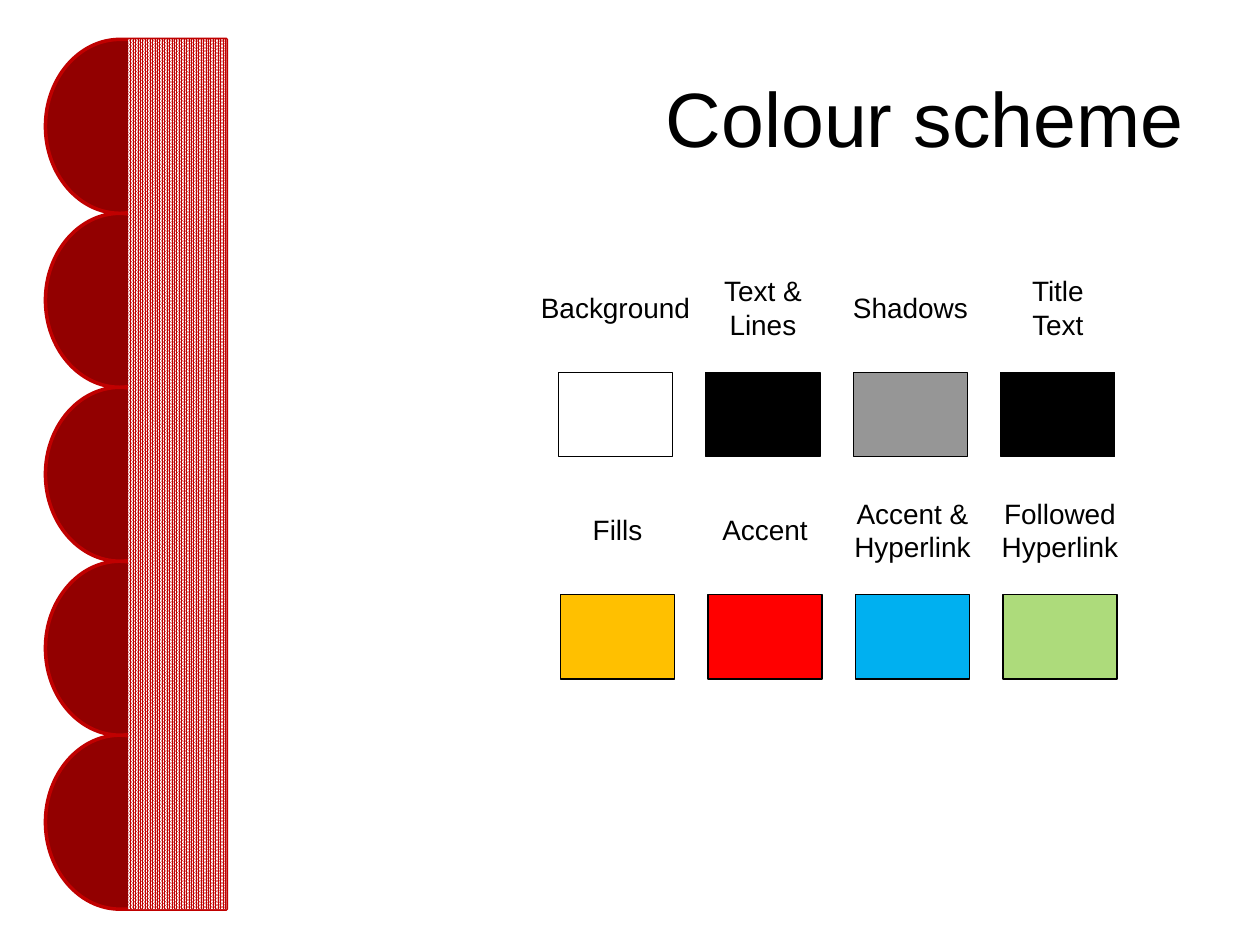
from lxml import etree
from pptx import Presentation
from pptx.dml.color import RGBColor
from pptx.enum.dml import MSO_PATTERN
from pptx.enum.shapes import MSO_SHAPE
from pptx.enum.text import MSO_ANCHOR, MSO_AUTO_SIZE, PP_ALIGN
from pptx.oxml.ns import qn
from pptx.util import Pt

BLACK = RGBColor(0x00, 0x00, 0x00)
WHITE = RGBColor(0xFF, 0xFF, 0xFF)
GREY = RGBColor(0x96, 0x96, 0x96)
AMBER = RGBColor(0xFF, 0xC0, 0x00)
RED = RGBColor(0xFF, 0x00, 0x00)
BLUE = RGBColor(0x00, 0xB0, 0xF0)
GREEN = RGBColor(0xAD, 0xDB, 0x7B)
DARK_RED = RGBColor(0x92, 0x00, 0x00)
CRIMSON = RGBColor(0xC0, 0x00, 0x00)

# Label, label width, swatch colour
BASE_ROW = [("Background", 100, WHITE), ("Text &\nLines", 60.5, BLACK),
            ("Shadows", 80, GREY), ("Title\vText", 45.4, BLACK)]
ACCENT_ROW = [("Fills", 42.5, AMBER), ("Accent", 63.4, RED),
              ("Accent &\nHyperlink", 80.6, BLUE),
              ("Followed\nHyperlink", 80.6, GREEN)]


def add_text(s, text, x, y, w, h, size=16, align=PP_ALIGN.CENTER,
             wrap=False, inset=0, fit=MSO_AUTO_SIZE.SHAPE_TO_FIT_TEXT):
    tf = s.shapes.add_textbox(Pt(x), Pt(y), Pt(w), Pt(h)).text_frame
    tf.text = text
    tf.word_wrap = wrap
    tf.auto_size = fit
    tf.margin_left = tf.margin_right = Pt(inset)
    tf.vertical_anchor = MSO_ANCHOR.MIDDLE
    for p in tf.paragraphs:
        p.alignment = align
        for r in p.runs:
            r.font.name = "Arial"
            r.font.size = Pt(size)
            r.font.color.rgb = BLACK


def add_path(s, start, segments):
    """Closed outline: one point makes a line, three make a Bézier curve."""
    fb = s.shapes.build_freeform(Pt(start[0]), Pt(start[1]))
    fb.add_line_segments([(Pt(x), Pt(y)) for seg in segments for x, y in seg],
                         close=True)
    sp = fb.convert_to_shape()
    lines = iter(list(sp.element.iter(qn("a:lnTo"))))
    for seg in segments:
        group = [next(lines) for _ in seg]
        if len(seg) == 3:
            curve = etree.Element(qn("a:cubicBezTo"))
            group[0].addprevious(curve)
            for line in group:
                curve.append(line[0])
                line.getparent().remove(line)
    return sp


def add_scalloped_border(s, x, y, w, h, lobes=5):
    rx, ry = 42.5, h / lobes / 2
    kx, ky = 0.55 * rx, 0.55 * ry  # control lengths of a quarter ellipse
    cx, notch = x + rx, x + 51
    dip = 1

    # Lobes run down the left side, then the outline closes on the right
    segments = []
    for i in range(lobes):
        top = y + 2 * i * ry
        mid, bottom = top + ry, top + 2 * ry
        segments += [[(cx - kx, top), (x, mid - ky), (x, mid)],
                     [(x, mid + ky), (cx - kx, bottom), (cx, bottom)]]
        if i < lobes - 1:
            segments += [[(cx + 3, bottom), (cx + 6, bottom - dip / 2),
                          (notch, bottom - dip)],
                         [(notch, bottom + dip)],
                         [(cx + 6, bottom + dip / 2), (cx + 3, bottom),
                          (cx, bottom)]]
    segments += [[(x + w, y + h)], [(x + w, y)]]
    sp = add_path(s, (cx, y), segments)
    sp.shadow.inherit = False
    sp.fill.solid()
    sp.fill.fore_color.rgb = DARK_RED
    sp.line.color.rgb = CRIMSON
    sp.line.width = Pt(2)

    # Patterned band
    band = 56.2
    sp = s.shapes.add_shape(MSO_SHAPE.RECTANGLE, Pt(x + w - band), Pt(y),
                            Pt(band), Pt(h))
    sp.shadow.inherit = False
    sp.fill.patterned()
    sp.fill.pattern = MSO_PATTERN.PERCENT_90
    sp.fill.fore_color.rgb = CRIMSON
    sp.fill.back_color.rgb = WHITE
    sp.line.fill.background()


def add_swatch_row(s, items, x, y, w, h):
    swatch_w, swatch_h = 65.2, 48.2
    pitch = (w - swatch_w) / (len(items) - 1)
    label_y = y + 18.7  # shared centre line of the labels
    for i, (label, label_w, color) in enumerate(items):
        left = x + i * pitch
        label_h = 26.6 if len(label.splitlines()) == 1 else 46
        add_text(s, label, left + (swatch_w - label_w) / 2,
                 label_y - label_h / 2, label_w, label_h)
        sp = s.shapes.add_shape(MSO_SHAPE.RECTANGLE, Pt(left),
                                Pt(y + h - swatch_h), Pt(swatch_w),
                                Pt(swatch_h))
        sp.shadow.inherit = False
        sp.fill.solid()
        sp.fill.fore_color.rgb = color
        sp.line.color.rgb = BLACK
        sp.line.width = Pt(0.75)


def main():
    prs = Presentation()
    prs.slide_width, prs.slide_height = Pt(720), Pt(540)
    s = prs.slides.add_slide(prs.slide_layouts[6])

    add_scalloped_border(s, 26, 22.5, 103.4, 497)
    # Title
    add_text(s, "Colour scheme", 37.9, 21.6, 645.8, 90, size=44, inset=7.2,
             align=PP_ALIGN.RIGHT, wrap=True, fit=MSO_AUTO_SIZE.NONE)
    # Colour rows
    add_swatch_row(s, BASE_ROW, 319.1, 157, 318, 104)
    add_swatch_row(s, ACCENT_ROW, 320.3, 284, 318, 104)

    prs.save("out.pptx")


if __name__ == "__main__":
    main()
